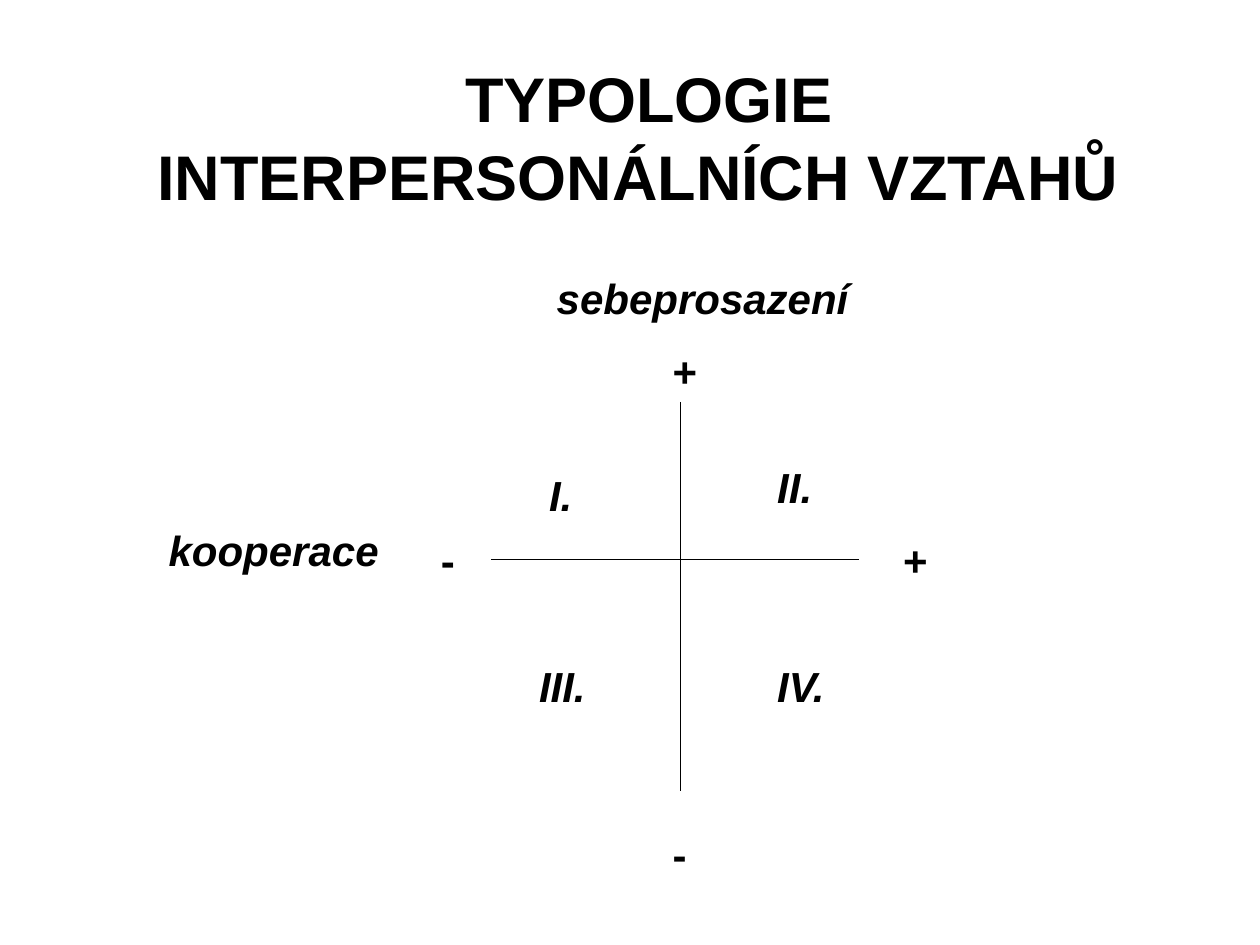
from pptx import Presentation
from pptx.dml.color import RGBColor
from pptx.enum.shapes import MSO_CONNECTOR
from pptx.enum.text import MSO_ANCHOR, PP_ALIGN
from pptx.oxml.ns import qn
from pptx.util import Inches, Pt
from lxml.etree import SubElement


def rgb(value):
    return RGBColor.from_string(value)


def add_run(p, text, size=24, bold=True, italic=False, font="Arial", color="000000"):
    r = p.add_run()
    r.text = text
    r.font.name = font
    r.font.size = Pt(size)
    r.font.bold = bold
    r.font.italic = italic
    r.font.color.rgb = rgb(color)


class Diagram:
    ink = "000000"
    paper = "FFFFFF"
    label_height = 0.5

    def __init__(self, prs):
        self.s = prs.slides.add_slide(prs.slide_layouts[6])
        fill = self.s.background.fill
        fill.solid()
        fill.fore_color.rgb = rgb(self.paper)

    def box(self, x, y, w, h):
        sp = self.s.shapes.add_textbox(Inches(x), Inches(y), Inches(w), Inches(h))
        tf = sp.text_frame
        tf.word_wrap = True
        return tf

    def title(self, text, x, y, w, h):
        tf = self.box(x, y, w, h)
        tf.vertical_anchor = MSO_ANCHOR.MIDDLE
        p = tf.paragraphs[0]
        p.alignment = PP_ALIGN.CENTER
        add_run(p, " ", size=44, bold=False, color=self.ink)
        add_run(p, text, size=36, color=self.ink)

    def label(self, text, x, y, w, italic=True):
        tf = self.box(x, y, w, self.label_height)
        add_run(tf.paragraphs[0], text, italic=italic, color=self.ink)

    def axis(self, x1, y1, x2, y2):
        line = self.s.shapes.add_connector(
            MSO_CONNECTOR.STRAIGHT, Inches(x1), Inches(y1), Inches(x2), Inches(y2)
        )
        line.line.color.rgb = rgb(self.ink)
        line.line.width = Pt(1)
        SubElement(line._element.spPr, qn("a:effectLst"))


def main():
    prs = Presentation()
    prs.slide_width = Inches(10)
    prs.slide_height = Inches(7.5)
    diagram = Diagram(prs)

    diagram.title("TYPOLOGIE INTERPERSONÁLNÍCH VZTAHŮ", 0.9, 0.44, 8.33, 1.17)

    diagram.axis(5.4, 3.19, 5.4, 6.28)
    diagram.axis(3.9, 4.44, 6.82, 4.44)

    names = [("sebeprosazení", 4.32, 2.11, 2.58), ("kooperace", 1.24, 4.11, 2)]
    quadrants = [
        ("I.", 4.26, 3.68, 0.56),
        ("II.", 6.07, 3.61, 0.58),
        ("III.", 4.18, 5.19, 0.64),
        ("IV.", 6.07, 5.19, 0.77),
    ]
    for text, x, y, w in names + quadrants:
        diagram.label(text, x, y, w)

    poles = [
        ("+", 5.24, 2.69, 0.5),
        ("-", 5.24, 6.53, 0.42),
        ("-", 3.4, 4.19, 0.42),
        ("+", 7.07, 4.19, 0.4),
    ]
    for text, x, y, w in poles:
        diagram.label(text, x, y, w, italic=False)

    prs.save("out.pptx")


if __name__ == "__main__":
    main()
